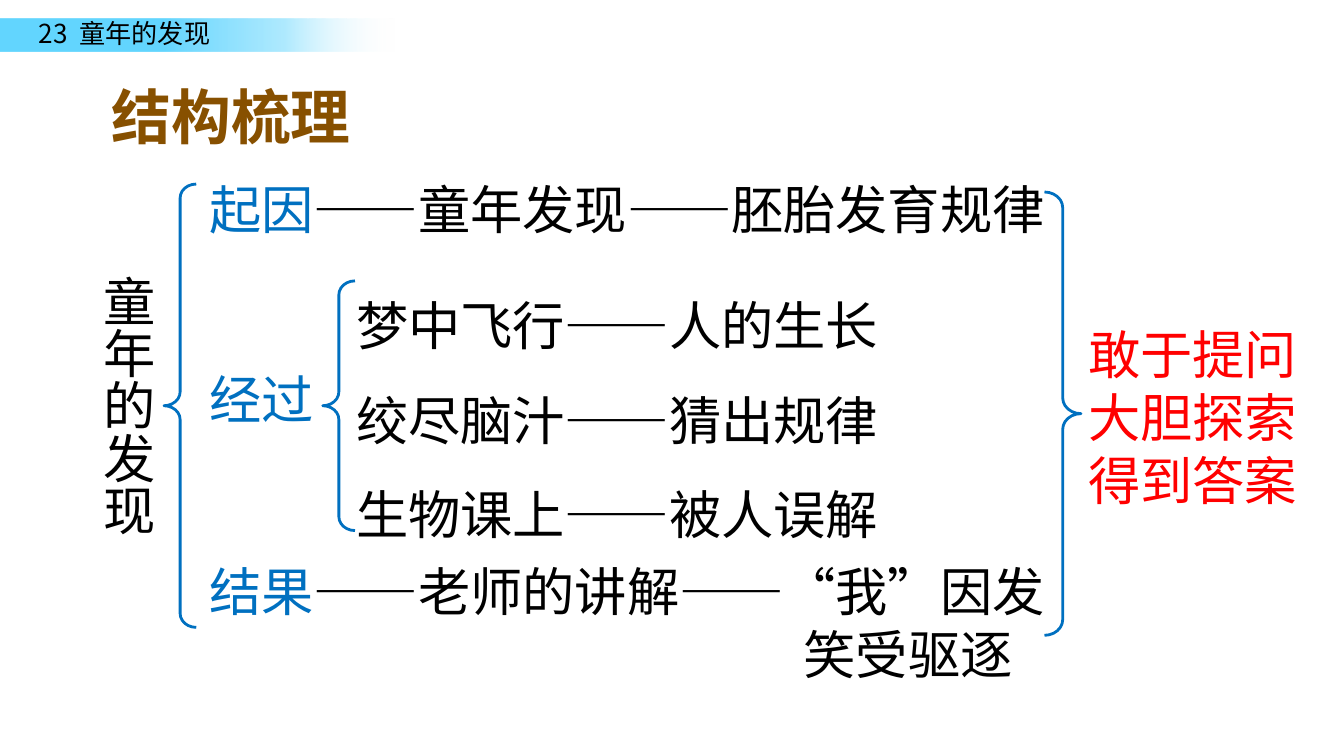
from lxml.etree import SubElement
from pptx import Presentation
from pptx.dml.color import RGBColor
from pptx.enum.lang import MSO_LANGUAGE_ID
from pptx.enum.shapes import MSO_SHAPE
from pptx.enum.text import MSO_ANCHOR
from pptx.oxml import parse_xml
from pptx.oxml.ns import nsdecls, qn
from pptx.util import Cm, Pt

COLORS = {"black": "000000", "blue": "0070C0", "red": "FF0000", "brown": "875000"}
CJK = "Noto Sans CJK SC"
LABEL_X = 3.71
HANG = 11.23

# Box (left, top, width, height in cm), paragraphs of (text, colour) runs, options
TEXTS = [
    ((0.48, 0.2, 4.01, 0.86), [[("23  童年的发现", "black")]], {"size": 14, "wrap": False}),
    ((1.93, 1.4, 6.17, 1.55), [[("结构梳理", "brown")]],
     {"size": 32, "bold": True, "font": "Arial", "inset": (0.18, 0.1)}),
    ((1.55, 5.08, 1.7, 6.45), [[("童年的发现", "black")]], {"vertical": True}),
    ((LABEL_X, 3.23, 18.06, 1.45),
     [[("起因", "blue"), ("——童年发现——胚胎发育规律", "black")]], {}),
    ((LABEL_X, 6.81, 2.69, 1.45), [[("经过", "blue")]], {}),
    ((6.48, 4.83, 12.6, 5.64),
     [[("梦中飞行——人的生长", "black")],
      [("绞尽脑汁——猜出规律", "black")],
      [("生物课上——被人误解", "black")]], {"spacing": 1.5}),
    ((LABEL_X, 10.44, 16.41, 2.64),
     [[("结果", "blue"), ("——老师的讲解——“我”因发笑受驱逐", "black")]], {"hang": HANG}),
    ((20.32, 5.97, 4.88, 3.84),
     [[(line, "red")] for line in ("敢于提问", "大胆探索", "得到答案")], {}),
]
BRACES = [
    (MSO_SHAPE.LEFT_BRACE, (3.1, 3.48, 0.61, 8.38)),
    (MSO_SHAPE.LEFT_BRACE, (6.1, 5.31, 0.61, 4.72)),
    (MSO_SHAPE.RIGHT_BRACE, (19.74, 3.63, 0.69, 8.38)),
]
BAND = (0, 0.36, 7.7, 0.61)
BAND_STOPS = [(40, "63D6FF", 100), (70, "97E4FF", 76), (97, "FFFFFF", 0)]  # %, colour, opacity %


def color(name):
    return RGBColor.from_string(COLORS[name])


def cm(box):
    return [Cm(v) for v in box]


def add_band(s):
    sp = s.shapes.add_shape(MSO_SHAPE.RECTANGLE, *cm(BAND))
    sp.shadow.inherit = False
    sp.line.fill.background()
    stops = "".join(
        f'<a:gs pos="{pos * 1000}"><a:srgbClr val="{rgb}">'
        f'<a:alpha val="{alpha * 1000}"/></a:srgbClr></a:gs>'
        for pos, rgb, alpha in BAND_STOPS)
    grad = parse_xml(f'<a:gradFill {nsdecls("a")} rotWithShape="1"><a:gsLst>{stops}</a:gsLst>'
                     '<a:lin ang="0" scaled="0"/></a:gradFill>')
    sp._element.spPr.find(qn("a:prstGeom")).addnext(grad)


def add_text(s, box, paragraphs, size=28, bold=False, font=CJK, wrap=True,
             vertical=False, spacing=None, hang=None, inset=(0.25, 0.13)):
    tf = s.shapes.add_textbox(*cm(box)).text_frame
    tf.word_wrap = wrap
    tf.vertical_anchor = MSO_ANCHOR.TOP
    tf.margin_left = tf.margin_right = Cm(inset[0])
    tf.margin_top = tf.margin_bottom = Cm(inset[1])
    if vertical:
        tf._txBody.bodyPr.set("vert", "eaVert")
    for i, runs in enumerate(paragraphs):
        p = tf.paragraphs[0] if i == 0 else tf.add_paragraph()
        if spacing:
            p.line_spacing = spacing
        if hang:
            pPr = p._p.get_or_add_pPr()
            pPr.set("marL", str(Cm(hang)))
            pPr.set("indent", str(-Cm(hang)))
        p.font.size, p.font.bold, p.font.name = Pt(size), bold, font
        for text, name in runs:
            r = p.add_run()
            r.text = text
            r.font.color.rgb = color(name)
            r.font.language_id = MSO_LANGUAGE_ID.SIMPLIFIED_CHINESE
            SubElement(r._r.get_or_add_rPr(), qn("a:ea")).set("typeface", CJK)


def add_brace(s, kind, box):
    sp = s.shapes.add_shape(kind, *cm(box))
    sp.shadow.inherit = False
    sp.fill.background()
    sp.line.color.rgb = color("blue")
    sp.line.width = Pt(1.5)
    sp.adjustments[0], sp.adjustments[1] = 0.43, 0.5


def main():
    prs = Presentation()
    prs.slide_width, prs.slide_height = Cm(25.4), Cm(14.29)
    s = prs.slides.add_slide(prs.slide_layouts[6])
    add_band(s)
    for box, paragraphs, options in TEXTS:
        add_text(s, box, paragraphs, **options)
    for kind, box in BRACES:
        add_brace(s, kind, box)
    prs.save("out.pptx")


if __name__ == "__main__":
    main()
